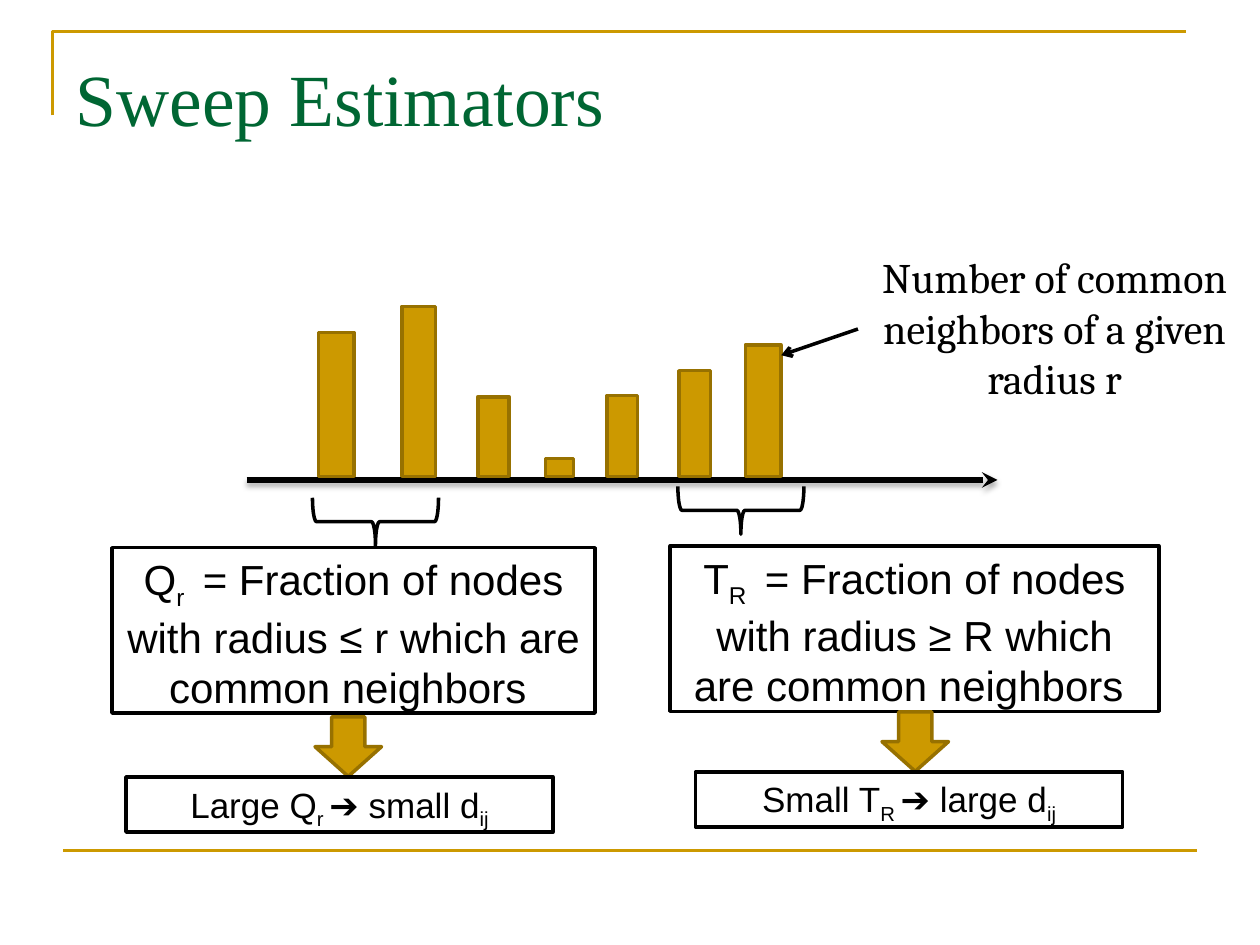
"""Build the Sweep Estimators slide."""
import dataclasses

import lxml.etree
import pptx
import pptx.dml.color
import pptx.enum.shapes
import pptx.enum.text
import pptx.oxml.ns
import pptx.util

Pt = pptx.util.Pt
RGB = pptx.dml.color.RGBColor.from_string
qn = pptx.oxml.ns.qn
SHAPE = pptx.enum.shapes.MSO_SHAPE


@dataclasses.dataclass(frozen=True)
class Theme:
    """Hold the colours, fonts and sizes of the slide."""
    gold: str = "CC9900"
    gold_edge: str = "977100"
    green: str = "006633"
    ink: str = "000000"
    title_font: str = "Times New Roman"
    body_font: str = "Arial"
    note_font: str = "Cambria"
    title_size: float = 42
    body_size: float = 24
    small_size: float = 20
    rule_width: float = 1.5
    line_width: float = 2
    axis_width: float = 3


def write_text(tf, text, font, size, color, align="CENTER", margin_top=3.6):
    """Fill a text frame; every second part between bars is a subscript."""
    tf.word_wrap = True
    tf.margin_top = Pt(margin_top)
    tf.vertical_anchor = pptx.enum.text.MSO_ANCHOR.TOP
    p = tf.paragraphs[0]
    p.alignment = pptx.enum.text.PP_ALIGN[align]
    for i, part in enumerate(text.split("|")):
        r = p.add_run()
        r.text = part
        r.font.name, r.font.size = font, Pt(size)
        r.font.color.rgb = RGB(color)
        if i % 2:
            r.font._element.set("baseline", "-25000")


class Deck:
    """Hold the theme and the current slide, and draw its elements."""

    def __init__(self, prs, theme):
        """Add a title-only slide."""
        self.t = theme
        self.s = prs.slides.add_slide(prs.slide_layouts[5])

    def stroke(self, sp, color, width):
        """Set the line of a shape or connector."""
        sp.line.color.rgb = RGB(color)
        sp.line.width = Pt(width)

    def title(self, text, x, y, w, h):
        """Place and fill the title placeholder."""
        sp = self.s.shapes.title
        sp.left, sp.top, sp.width, sp.height = map(Pt, (x, y, w, h))
        write_text(sp.text_frame, text, self.t.title_font, self.t.title_size,
                   self.t.green, align="LEFT", margin_top=8.5)

    def corner(self, x, y, w, h):
        """Draw the open corner rule above the title."""
        fb = self.s.shapes.build_freeform(Pt(x), Pt(y + h))
        fb.add_line_segments([(Pt(x), Pt(y)), (Pt(x + w), Pt(y))], close=False)
        sp = fb.convert_to_shape()
        sp.shadow.inherit = False
        sp.fill.background()
        self.stroke(sp, self.t.gold, self.t.rule_width)

    def line(self, x1, y1, x2, y2, color, width, head=None, shadow=False):
        """Draw a straight line with an optional arrowhead and shadow."""
        sp = self.s.shapes.add_connector(
            pptx.enum.shapes.MSO_CONNECTOR.STRAIGHT, *map(Pt, (x1, y1, x2, y2)))
        self.stroke(sp, color, width)
        if head:
            lxml.etree.SubElement(sp.line._get_or_add_ln(), qn("a:tailEnd"), type=head)
        effects = lxml.etree.SubElement(sp._element.spPr, qn("a:effectLst"))
        if shadow:
            outer = lxml.etree.SubElement(
                effects, qn("a:outerShdw"), blurRad=str(Pt(3.1)), dist=str(Pt(1.8)),
                dir="5400000", rotWithShape="0")
            clr = lxml.etree.SubElement(outer, qn("a:srgbClr"), val=self.t.ink)
            lxml.etree.SubElement(clr, qn("a:alpha"), val="35000")

    def shape(self, kind, x, y, w, h, gold=False, rotation=0):
        """Draw a gold shape or a black outline."""
        sp = self.s.shapes.add_shape(kind, *map(Pt, (x, y, w, h)))
        sp.shadow.inherit = False
        sp.rotation = rotation
        if gold:
            sp.fill.solid()
            sp.fill.fore_color.rgb = RGB(self.t.gold)
        else:
            sp.fill.background()
        self.stroke(sp, self.t.gold_edge if gold else self.t.ink, self.t.line_width)
        return sp

    def box(self, text, x, y, w, h, size):
        """Draw an outlined box of centred text."""
        sp = self.shape(SHAPE.RECTANGLE, x, y, w, h)
        write_text(sp.text_frame, text, self.t.body_font, size, self.t.ink)

    def note(self, text, x, y, w, h):
        """Add a plain text box."""
        sp = self.s.shapes.add_textbox(*map(Pt, (x, y, w, h)))
        write_text(sp.text_frame, text, self.t.note_font, self.t.body_size, self.t.ink)


def main():
    """Build and save the slide."""
    t = Theme()
    prs = pptx.Presentation()
    prs.slide_width, prs.slide_height = Pt(720), Pt(540)
    d = Deck(prs, t)

    d.corner(30, 18, 648, 48)
    d.line(36, 486, 684, 486, t.gold, t.rule_width)
    d.title("Sweep Estimators", 36, 21.6, 648, 90)

    d.line(141, 274.3, 570, 274.3, t.ink, t.axis_width, head="stealth", shadow=True)
    base = 272.2
    bars = [(182, 190, 20.2), (229.8, 175, 19), (273, 226.8, 18), (311.8, 262, 16),
            (346.8, 226, 17.5), (388, 211.8, 18), (426, 197, 20.2)]
    for x, y, w in bars:
        d.shape(SHAPE.RECTANGLE, x, y, w, base - y, gold=True)

    columns = [
        ("Q|r | = Fraction of nodes with radius ≤ r which are common neighbors ",
         (64, 313, 276, 94.5), (200.9, 262.1),
         "Large Q|r |➔ small d|ij", (180, 409.7), (72, 444)),
        ("T|R | = Fraction of nodes with radius ≥ R which are common neighbors ",
         (383, 312, 279.2, 94.5), (409.7, 255.6),
         "Small T|R |➔ large d|ij", (504, 406.8), (397.5, 441)),
    ]
    for definition, frame, brace, result, arrow, result_at in columns:
        d.box(definition, *frame, t.body_size)
        d.shape(SHAPE.LEFT_BRACE, *brace, 27.4, 72, rotation=270)
        d.shape(SHAPE.DOWN_ARROW, *arrow, 38, 34, gold=True)
        d.box(result, *result_at, 244, 31.5, t.small_size)

    d.note("Number of common neighbors of a given radius r", 490.3, 140.4, 224.6, 94.5)
    d.line(490.3, 188, 446.4, 203, t.ink, t.line_width, head="arrow")
    prs.save("out.pptx")


if __name__ == "__main__":
    main()
